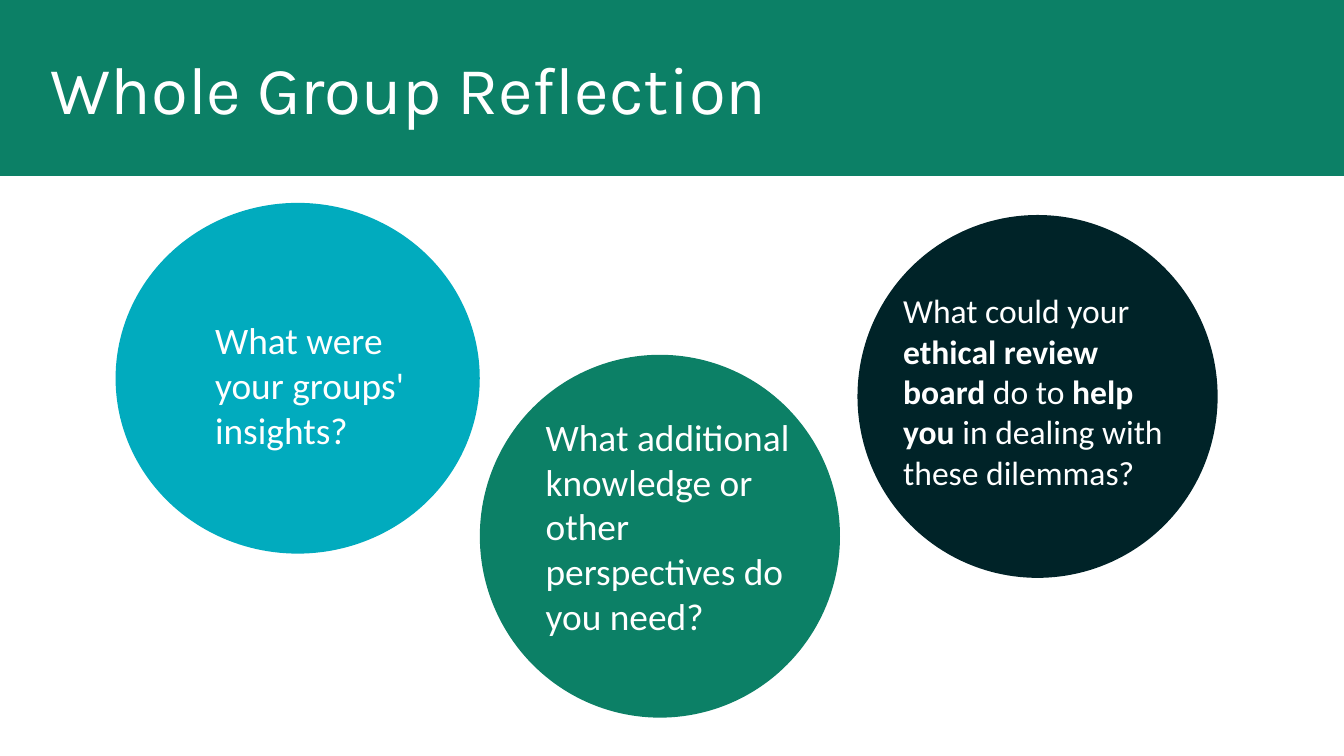
from dataclasses import dataclass

from pptx import Presentation
from pptx.dml.color import RGBColor
from pptx.enum import shapes, text
from pptx.util import Inches, Pt


@dataclass(frozen=True)
class Theme:
    teal: str = "01ABBE"
    green: str = "0C8066"
    dark: str = "002328"
    white: str = "FFFFFF"
    title_font: str = "Karla"
    body_font: str = "Calibri"
    title_size: int = 36
    question_size: int = 20
    long_question_size: int = 18


class SlideBuilder:
    def __init__(self, slide, theme):
        self.slide = slide
        self.theme = theme

    def filled(self, preset, box, color):
        shape = self.slide.shapes.add_shape(preset, *map(Inches, box))
        shape.shadow.inherit = False
        shape.fill.solid()
        shape.fill.fore_color.rgb = RGBColor.from_string(color)
        shape.line.fill.background()

    def words(self, box, paragraphs, font, size, inset=(0, 0)):
        """Write paragraphs, each a list of (wording, bold) runs."""
        frame = self.slide.shapes.add_textbox(*map(Inches, box)).text_frame
        frame.word_wrap = True
        frame.vertical_anchor = text.MSO_ANCHOR.TOP
        frame.margin_left = frame.margin_right = Inches(inset[0])
        frame.margin_top = frame.margin_bottom = Inches(inset[1])
        for index, runs in enumerate(paragraphs):
            paragraph = frame.add_paragraph() if index else frame.paragraphs[0]
            for wording, bold in runs:
                run = paragraph.add_run()
                run.text = wording
                run.font.name = font
                run.font.size = Pt(size)
                run.font.bold = bold
                run.font.color.rgb = RGBColor.from_string(self.theme.white)

    def question(self, circle, color, box, paragraphs, size):
        self.filled(shapes.MSO_SHAPE.FLOWCHART_CONNECTOR, circle, color)
        self.words(box, paragraphs, self.theme.body_font, size)

    def title_band(self, wording):
        self.filled(shapes.MSO_SHAPE.RECTANGLE, (0, 0, 10, 1.31), self.theme.green)
        self.words((0.28, 0.3, 8.96, 0.71), [[(wording, False)]],
                   self.theme.title_font, self.theme.title_size, inset=(0.1, 0.05))


def main():
    theme = Theme()
    deck = Presentation()
    deck.slide_width = Inches(10)
    deck.slide_height = deck.slide_width * 9 // 16
    builder = SlideBuilder(deck.slides.add_slide(deck.slide_layouts[6]), theme)

    insights = [[("What were your groups'", False)], [("insights?", False)]]
    perspectives = [[("What additional knowledge or other perspectives do you need?", False)]]
    review_board = [[
        ("What could your ", False),
        ("ethical review board", True),
        (" do to ", False),
        ("help you ", True),
        ("in dealing with these dilemmas?", False),
    ]]
    builder.question((0.86, 1.51, 2.71, 2.61), theme.teal,
                     (1.6, 2.36, 1.45, 1.23), insights, theme.question_size)
    builder.question((3.57, 2.64, 2.68, 2.7), theme.green,
                     (4.06, 3.08, 1.94, 1.31), perspectives, theme.question_size)
    builder.question((6.38, 1.6, 2.68, 2.7), theme.dark,
                     (6.72, 2.16, 1.99, 1.57), review_board, theme.long_question_size)
    builder.title_band("Whole Group Reflection")
    deck.save("out.pptx")


if __name__ == "__main__":
    main()
